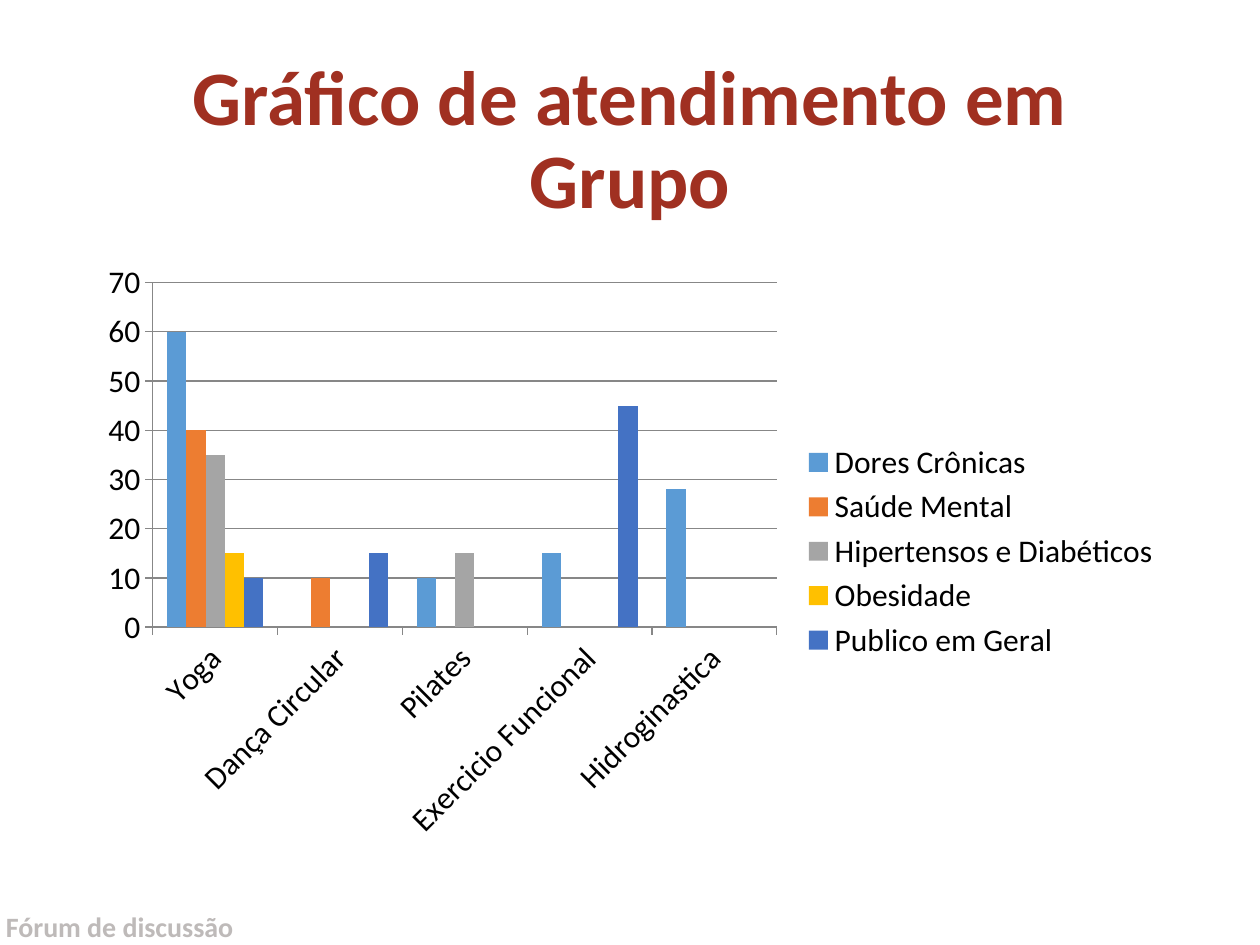
"""Build a slide with a clustered column chart of group sessions."""
from pptx import Presentation
from pptx.chart.data import CategoryChartData
from pptx.dml.color import RGBColor
from pptx.enum.chart import XL_CHART_TYPE, XL_LEGEND_POSITION, XL_TICK_MARK
from pptx.enum.text import MSO_ANCHOR, PP_ALIGN
from pptx.util import Inches, Pt

RED = RGBColor(0xA0, 0x30, 0x21)
PALE_GRAY = RGBColor(0xBE, 0xBA, 0xB9)
LINE_GRAY = RGBColor(0x87, 0x87, 0x87)
BLACK = RGBColor(0x00, 0x00, 0x00)
LIGHT_BLUE = RGBColor(0x5B, 0x9B, 0xD5)
ORANGE = RGBColor(0xED, 0x7D, 0x31)
GRAY = RGBColor(0xA5, 0xA5, 0xA5)
YELLOW = RGBColor(0xFF, 0xC0, 0x00)
BLUE = RGBColor(0x44, 0x72, 0xC4)

ACTIVITIES = ["Yoga", "Dança Circular", "Pilates", "Exercicio Funcional", "Hidroginastica"]
GROUPS = [
    ("Dores Crônicas", LIGHT_BLUE, [60, None, 10, 15, 28]),
    ("Saúde Mental", ORANGE, [40, 10, None, None, None]),
    ("Hipertensos e Diabéticos", GRAY, [35, None, 15, None, None]),
    ("Obesidade", YELLOW, [15, None, None, None, None]),
    ("Publico em Geral", BLUE, [10, 15, None, 45, None]),
]


def format_text(shape, text, size, color):
    frame = shape.text_frame
    frame.text = text
    frame.word_wrap = True
    frame.vertical_anchor = MSO_ANCHOR.MIDDLE
    paragraph = frame.paragraphs[0]
    paragraph.alignment = PP_ALIGN.CENTER
    font = paragraph.font
    font.name, font.size, font.bold = "Calibri", Pt(size), True
    font.color.rgb = color
    return frame


presentation = Presentation()
presentation.slide_width = Inches(10)
presentation.slide_height = Inches(7.5)
slide = presentation.slides.add_slide(presentation.slide_layouts[5])
margin = Pt(49.5)
content_width = presentation.slide_width - 2 * margin

title = slide.shapes.title
title.left, title.top = margin, Pt(28.75)
title.width, title.height = content_width, Pt(104.4)
title_frame = format_text(title, "Gráfico de atendimento em Grupo", 44, RED)
title_frame.paragraphs[0].line_spacing = 0.9

footer_height = Inches(0.3)
footer = slide.shapes.add_textbox(
    0, presentation.slide_height - footer_height, Inches(1.9), footer_height)
footer_frame = format_text(footer, "Fórum de discussão", 16, PALE_GRAY)
footer_frame.margin_left = footer_frame.margin_right = 0
footer_frame.margin_top = footer_frame.margin_bottom = 0

chart_data = CategoryChartData()
chart_data.categories = ACTIVITIES
for name, color, values in GROUPS:
    chart_data.add_series(name, values)
chart = slide.shapes.add_chart(
    XL_CHART_TYPE.COLUMN_CLUSTERED, margin, Pt(143.75), content_width, Pt(342.63), chart_data).chart
chart.has_title = False
chart.font.name, chart.font.size = "Calibri", Pt(18)
chart.font.color.rgb = BLACK
chart.has_legend = True
chart.legend.position = XL_LEGEND_POSITION.RIGHT
chart.legend.include_in_layout = False

plot = chart.plots[0]
plot.gap_width = 150
plot.overlap = 0
plot.vary_by_categories = False
for series, (name, color, values) in zip(plot.series, GROUPS):
    series.format.fill.solid()
    series.format.fill.fore_color.rgb = color

for axis in (chart.category_axis, chart.value_axis):
    axis.major_tick_mark = XL_TICK_MARK.OUTSIDE
    axis.minor_tick_mark = XL_TICK_MARK.NONE
    axis.format.line.color.rgb = LINE_GRAY

value_axis = chart.value_axis
value_axis.minimum_scale, value_axis.maximum_scale, value_axis.major_unit = 0, 70, 10
value_axis.has_major_gridlines = True
value_axis.major_gridlines.format.line.color.rgb = LINE_GRAY

presentation.save("out.pptx")
